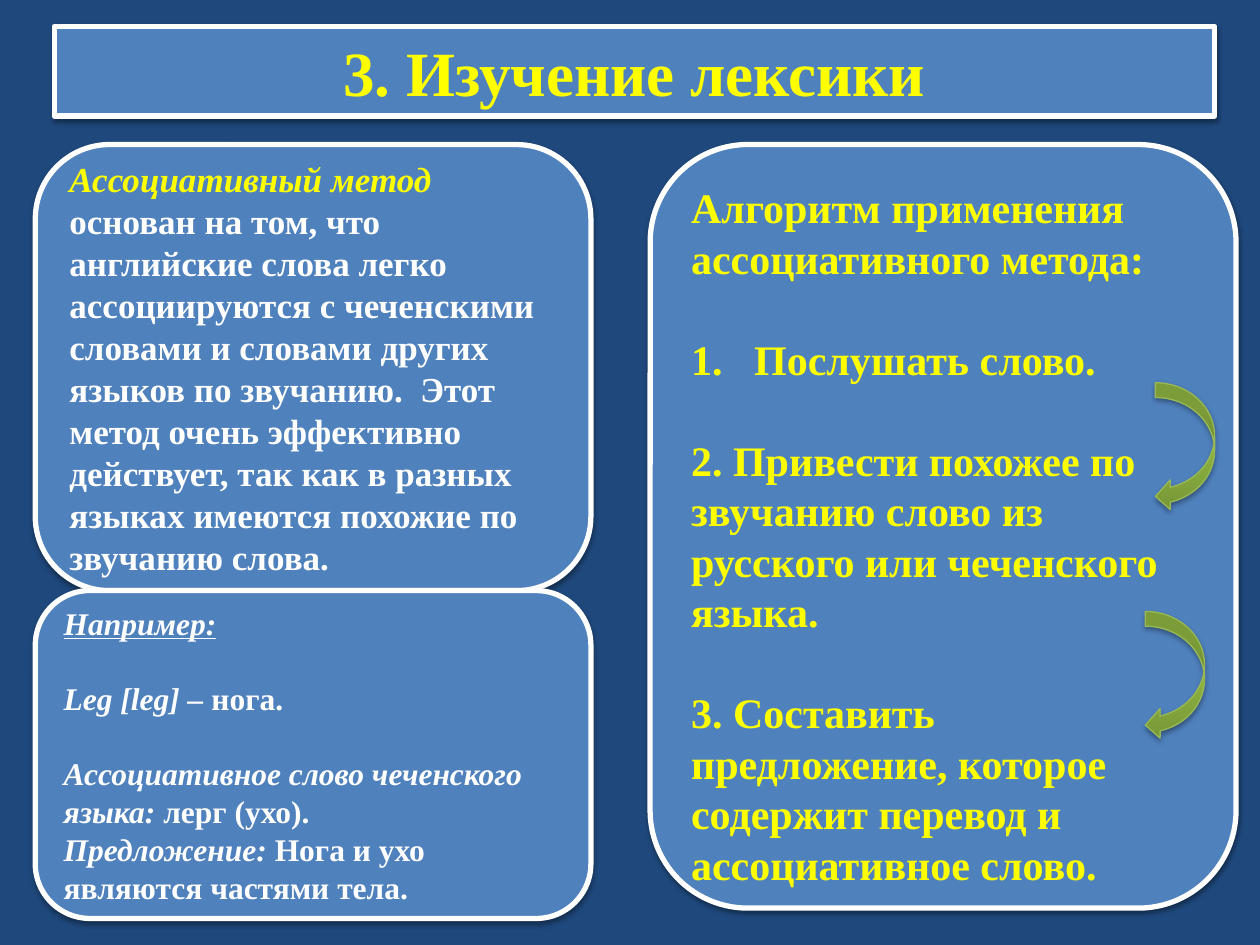
from copy import deepcopy
from lxml import etree
from pptx import Presentation
from pptx import util as u
from pptx.dml.color import RGBColor
from pptx.enum import shapes, text
from pptx.oxml.ns import qn

W, H = 10, 7.5
FONT = "Times New Roman"
HUES = {"back": "1F497D", "card": "4F81BD", "white": "FFFFFF", "gold": "FFFF00",
        "edge": "98B955", "dark": "779737", "mid": "9BC348", "lite": "9DC746",
        "shade": "000000"}

# Columns and rows, as shares of the slide's size
LEFT, LWIDE = 0.028, 0.441
RIGHT, RWIDE = 0.516, 0.465
TOP, SPLIT = 0.153, 0.625


def hue(name):
    return RGBColor.from_string(HUES[name])


def shade(shape, alpha, dist):
    """Soft shadow straight below the shape."""
    shape.shadow.inherit = False
    root = shape._element.spPr.find(qn("a:effectLst"))
    glow = etree.SubElement(root, qn("a:outerShdw"), blurRad=str(u.Pt(3.1)),
                            dist=str(u.Pt(dist)), dir="5400000", rotWithShape="0")
    tint = etree.SubElement(glow, qn("a:srgbClr"), val=HUES["shade"])
    etree.SubElement(tint, qn("a:alpha"), val=str(alpha * 1000))


def place(slide, kind, x, y, w, h, edge, thick):
    shape = slide.shapes.add_shape(kind, u.Inches(x * W), u.Inches(y * H),
                                   u.Inches(w * W), u.Inches(h * H))
    shape.line.color.rgb = hue(edge)
    shape.line.width = u.Pt(thick)
    return shape


def card(slide, x, y, w, h, kind=shapes.MSO_SHAPE.ROUNDED_RECTANGLE):
    """Blue panel with a white border; returns its text frame."""
    shape = place(slide, kind, x, y, w, h, "white", 3)
    shape.fill.solid()
    shape.fill.fore_color.rgb = hue("card")
    shade(shape, 38, 1.6)
    frame = shape.text_frame
    frame.word_wrap = True
    frame.vertical_anchor = text.MSO_ANCHOR.MIDDLE
    return frame


def write(frame, paras, size, align=text.PP_ALIGN.LEFT):
    """Each paragraph: gap before it, then runs of (words, colour, style)."""
    for n, (gap, *runs) in enumerate(paras):
        para = frame.add_paragraph() if n else frame.paragraphs[0]
        para.alignment = align
        para.space_before = u.Pt(gap)
        if len(runs) == 1:
            para.text = runs[0][0]
        else:
            for words, *_ in runs:
                para.add_run().text = words
        looks = runs * len(para.runs) if len(runs) == 1 else runs
        for run, (_, tint, style) in zip(para.runs, looks):
            font = run.font
            font.name, font.size, font.bold = FONT, u.Pt(size), True
            font.color.rgb = hue(tint)
            font.italic = "i" in style
            font.underline = "u" in style


def number(para):
    """Automatic number with a hanging indent."""
    props = para._p.get_or_add_pPr()
    props.set("marL", str(u.Inches(0.5)))
    props.set("indent", str(u.Inches(-0.5)))
    etree.SubElement(props, qn("a:buFont"), typeface="+mj-lt")
    etree.SubElement(props, qn("a:buAutoNum"), type="arabicPeriod")


def arrow(slide, x, y):
    """Green curved arrow from one step to the next."""
    shape = place(slide, shapes.MSO_SHAPE.CURVED_LEFT_ARROW, x, y, 0.047, 0.136,
                  "edge", 0.75)
    shape.fill.gradient()
    shape.fill.gradient_angle = 90
    stops = shape._element.spPr.find(qn("a:gradFill")).find(qn("a:gsLst"))
    stops.append(deepcopy(stops[-1]))
    marks = [(0, "dark"), (0.8, "mid"), (1, "lite")]
    for stop, (pos, tint) in zip(shape.fill.gradient_stops, marks):
        stop.position = pos
        stop.color.rgb = hue(tint)
    shade(shape, 35, 1.8)


def main():
    deck = Presentation()
    deck.slide_width, deck.slide_height = u.Inches(W), u.Inches(H)
    slide = deck.slides.add_slide(deck.slide_layouts[6])
    slide.background.fill.solid()
    slide.background.fill.fore_color.rgb = hue("back")

    # Title
    title = card(slide, 0.043, 0.028, 0.921, 0.095, shapes.MSO_SHAPE.RECTANGLE)
    write(title, [(0, ("3. Изучение лексики", "gold", ""))], 36,
          text.PP_ALIGN.CENTER)

    # Method
    method = card(slide, LEFT, TOP, LWIDE, SPLIT - TOP)
    write(method, [(0, ("Ассоциативный метод ", "gold", "i"),
                    ("основан на том, что английские слова легко ассоциируются "
                     "с чеченскими словами и словами других языков по звучанию.  "
                     "Этот метод очень эффективно действует, так как в разных "
                     "языках имеются похожие по звучанию слова.", "white", ""))], 20)

    # Steps
    steps = card(slide, RIGHT, TOP, RWIDE, 0.808)
    steps.margin_top = u.Inches(0.19)
    lines = ["Алгоритм применения ассоциативного метода:",
             "Послушать слово.",
             "2. Привести похожее по\vзвучанию слово из\v"
             "русского или чеченского\vязыка.",
             "3. Составить\vпредложение, которое\v"
             "содержит перевод и\vассоциативное слово."]
    write(steps, [(29 if n else 0, (line, "gold", ""))
                  for n, line in enumerate(lines)], 24)
    number(steps.paragraphs[1])
    for x, y in [(0.917, 0.405), (0.909, 0.647)]:
        arrow(slide, x, y)

    # Example
    sample = card(slide, LEFT, SPLIT, LWIDE, 0.347)
    write(sample, [
        (0, ("Например:", "white", "iu")),
        (21.5, ("Leg [leg] – ", "white", "i"), ("нога.", "white", "")),
        (21.5, ("Ассоциативное слово чеченского языка: ", "white", "i"),
         ("лерг (ухо).", "white", "")),
        (0, ("Предложение: ", "white", "i"),
         ("Нога и ухо являются частями тела.", "white", ""))], 18)

    deck.save("out.pptx")


if __name__ == "__main__":
    main()
